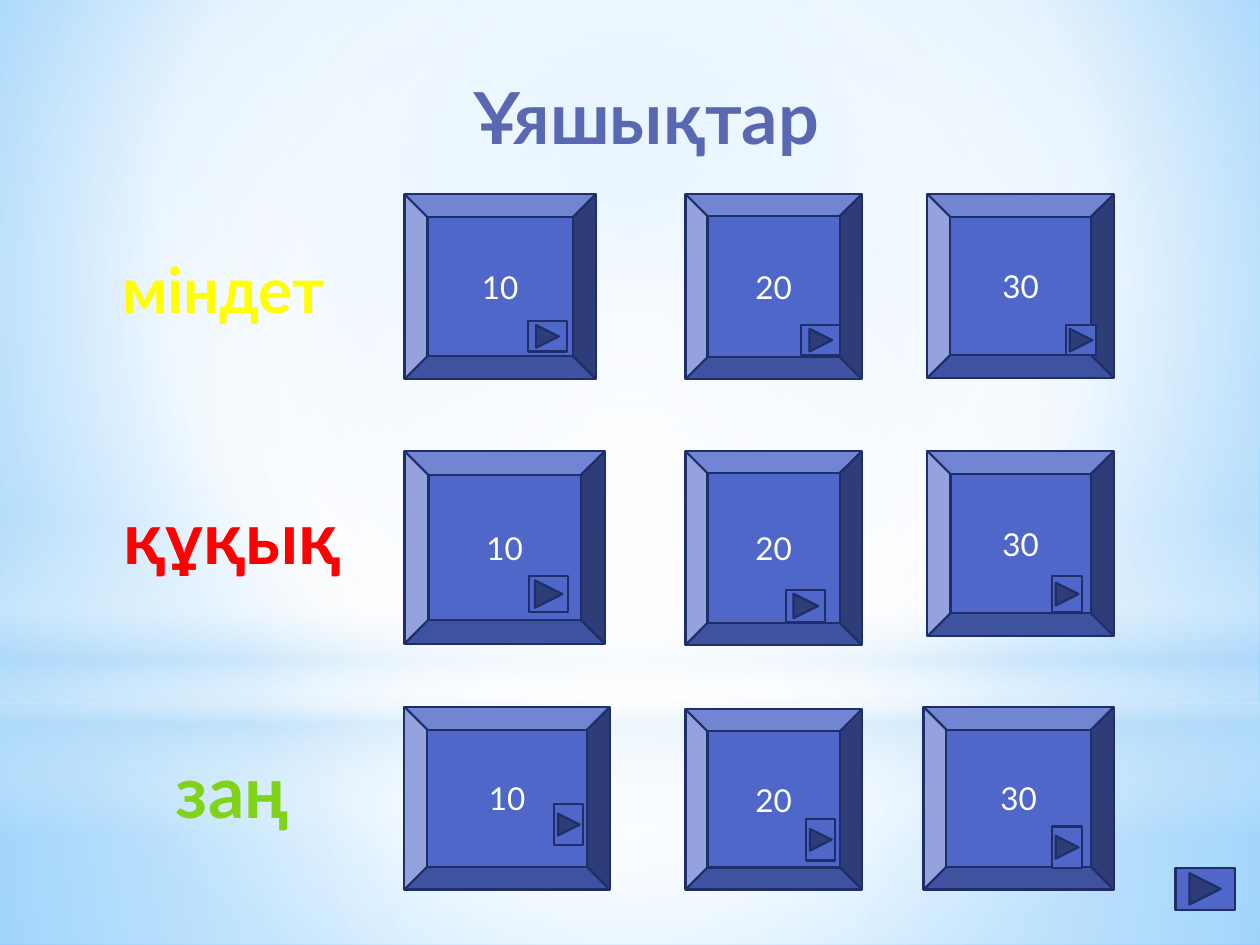
from lxml.etree import SubElement
from pptx import Presentation
from pptx.dml.color import RGBColor
from pptx.enum.shapes import MSO_SHAPE
from pptx.enum.text import MSO_ANCHOR, PP_ALIGN
from pptx.oxml.ns import qn
from pptx.util import Inches, Pt

FONT = "Lato"
BLUE = RGBColor(0x4E, 0x67, 0xC8)
NAVY = RGBColor(0x1F, 0x2E, 0x69)
WHITE = RGBColor(0xFF, 0xFF, 0xFF)
SKY = RGBColor(0xB4, 0xDC, 0xFA)
LIGHT_BLUE = RGBColor(0x9E, 0xD5, 0xFF)
DEEP_SKY = RGBColor(0x5B, 0xB9, 0xFF)
VIOLET = RGBColor(0x59, 0x68, 0xB0)
YELLOW = RGBColor(0xFF, 0xFF, 0x00)
RED = RGBColor(0xFF, 0x00, 0x00)
GREEN = RGBColor(0x81, 0xD3, 0x1A)

SCORES = ("10", "20", "30")
COLUMN_LEFTS = (3.21, 5.44, 7.36)
GRID_RIGHT, GRID_BOTTOM = 8.84, 7.06
ROW_TOPS = (1.54, 3.58, 5.61)
CENTRE = (50, 50, 50, 50)

# Width and height of each tile, by row and column
TILE_SIZES = (
    ((1.52, 1.47), (1.40, 1.47), (1.48, 1.46)),
    ((1.59, 1.53), (1.40, 1.54), (1.48, 1.47)),
    ((1.63, 1.45), (1.40, 1.43), (1.51, 1.45)),
)
# Box of the button on each tile, by row and column
BUTTON_BOXES = (
    ((4.19, 2.55, 0.31, 0.24), (6.36, 2.58, 0.31, 0.24), (8.46, 2.58, 0.24, 0.24)),
    ((4.20, 4.57, 0.31, 0.29), (6.24, 4.68, 0.31, 0.26), (8.35, 4.57, 0.24, 0.29)),
    ((4.40, 6.38, 0.23, 0.33), (6.40, 6.50, 0.23, 0.33), (8.35, 6.56, 0.24, 0.33)),
)
NEXT_SLIDE_BOX = (9.33, 6.89, 0.47, 0.33)
LABELS = (
    ("міндет", YELLOW, 36, (0.61, 1.93, 2.33, 0.71)),
    ("құқық", RED, 41, (0.48, 3.59, 2.73, 1.33)),
    ("заң", GREEN, 41, (0.48, 5.60, 2.73, 1.33)),
)


def inches(box):
    return [Inches(length) for length in box]


def write_text(shape, text, size=18, color=WHITE, bold=False):
    frame = shape.text_frame
    frame.word_wrap = True
    frame.vertical_anchor = MSO_ANCHOR.MIDDLE
    paragraph = frame.paragraphs[0]
    paragraph.alignment = PP_ALIGN.CENTER
    run = paragraph.add_run()
    run.text = text
    run.font.name = FONT
    run.font.size = Pt(size)
    run.font.bold = bold
    run.font.color.rgb = color


def set_gradient(fill, parent, stops, focus=None):
    """Fill with (position, colour, opacity) stops, radially if a focus is given, else downwards."""
    fill.background()
    gradient = parent.find(".//" + qn("a:noFill"))
    gradient.tag = qn("a:gradFill")
    gradient.set("rotWithShape", "1")
    stop_list = SubElement(gradient, qn("a:gsLst"))
    for position, color, opacity in stops:
        stop = SubElement(stop_list, qn("a:gs"), pos=str(position * 1000))
        color_element = SubElement(stop, qn("a:srgbClr"), val=str(color))
        if opacity < 100:
            SubElement(color_element, qn("a:alpha"), val=str(opacity * 1000))
    if focus:
        radial = SubElement(gradient, qn("a:path"), {"path": "circle"})
        sides = {side: str(share * 1000) for side, share in zip("ltrb", focus)}
        SubElement(radial, qn("a:fillToRect"), sides)
    else:
        SubElement(gradient, qn("a:lin"), ang=str(90 * 60000), scaled="0")


def add_glow(slide, kind, box, stops, focus=None):
    shape = slide.shapes.add_shape(kind, *inches(box))
    shape.shadow.inherit = False
    shape.line.fill.background()
    set_gradient(shape.fill, shape.element.spPr, stops, focus)


def add_backdrop(slide):
    fill = slide.background.fill
    fill.background()
    set_gradient(fill, slide.element.find(".//" + qn("p:bgPr")),
                 ((0, LIGHT_BLUE, 100), (60, WHITE, 100), (100, DEEP_SKY, 100)), (20, 10, 20, 60))
    add_glow(slide, MSO_SHAPE.RECTANGLE, (0, 5.58, 10, 1.92),
             ((0, WHITE, 91), (37, WHITE, 76), (100, SKY, 79)), CENTRE)
    add_glow(slide, MSO_SHAPE.RECTANGLE, (0, 0, 10, 5.58),
             ((0, WHITE, 89), (48, WHITE, 62), (100, SKY, 79)), CENTRE)
    add_glow(slide, MSO_SHAPE.RECTANGLE, (0, 4.12, 10, 2.5),
             ((0, WHITE, 0), (29, WHITE, 30), (45, SKY, 40),
              (55, WHITE, 26), (65, SKY, 60), (100, WHITE, 0)))
    add_glow(slide, MSO_SHAPE.OVAL, (0, 1.75, 10, 5.58),
             ((0, WHITE, 100), (56, WHITE, 0)), CENTRE)


def add_blue_shape(slide, kind, box):
    shape = slide.shapes.add_shape(kind, *inches(box))
    shape.shadow.inherit = False
    shape.fill.solid()
    shape.fill.fore_color.rgb = BLUE
    shape.line.color.rgb = NAVY
    shape.line.width = Pt(1.25)
    return shape


def add_button(slide, box):
    add_blue_shape(slide, MSO_SHAPE.ACTION_BUTTON_FORWARD_OR_NEXT, box)


def add_tile(slide, row, column):
    """Add a scored tile; the last column aligns right and the last row aligns to the bottom."""
    width, height = TILE_SIZES[row][column]
    left = GRID_RIGHT - width if column == 2 else COLUMN_LEFTS[column]
    top = GRID_BOTTOM - height if row == 2 else ROW_TOPS[row]
    tile = add_blue_shape(slide, MSO_SHAPE.BEVEL, (left, top, width, height))
    write_text(tile, SCORES[column])


def add_title(slide, text):
    title = slide.shapes.title
    title.left, title.top, title.width, title.height = inches((0.63, 0.29, 9, 1.25))
    write_text(title, text, size=41, color=VIOLET, bold=True)


def main():
    presentation = Presentation()
    presentation.slide_width, presentation.slide_height = Inches(10), Inches(7.5)
    slide = presentation.slides.add_slide(presentation.slide_layouts[5])
    add_backdrop(slide)
    # Bring the title in front of the backdrop
    slide.shapes.element.append(slide.shapes.title.element)
    add_title(slide, "Ұяшықтар")
    for row, (text, color, size, box) in enumerate(LABELS):
        label = slide.shapes.add_textbox(*inches(box))
        write_text(label, text, size=size, color=color, bold=True)
        for column in range(len(SCORES)):
            add_tile(slide, row, column)
            add_button(slide, BUTTON_BOXES[row][column])
    add_button(slide, NEXT_SLIDE_BOX)
    presentation.save("out.pptx")


if __name__ == "__main__":
    main()
